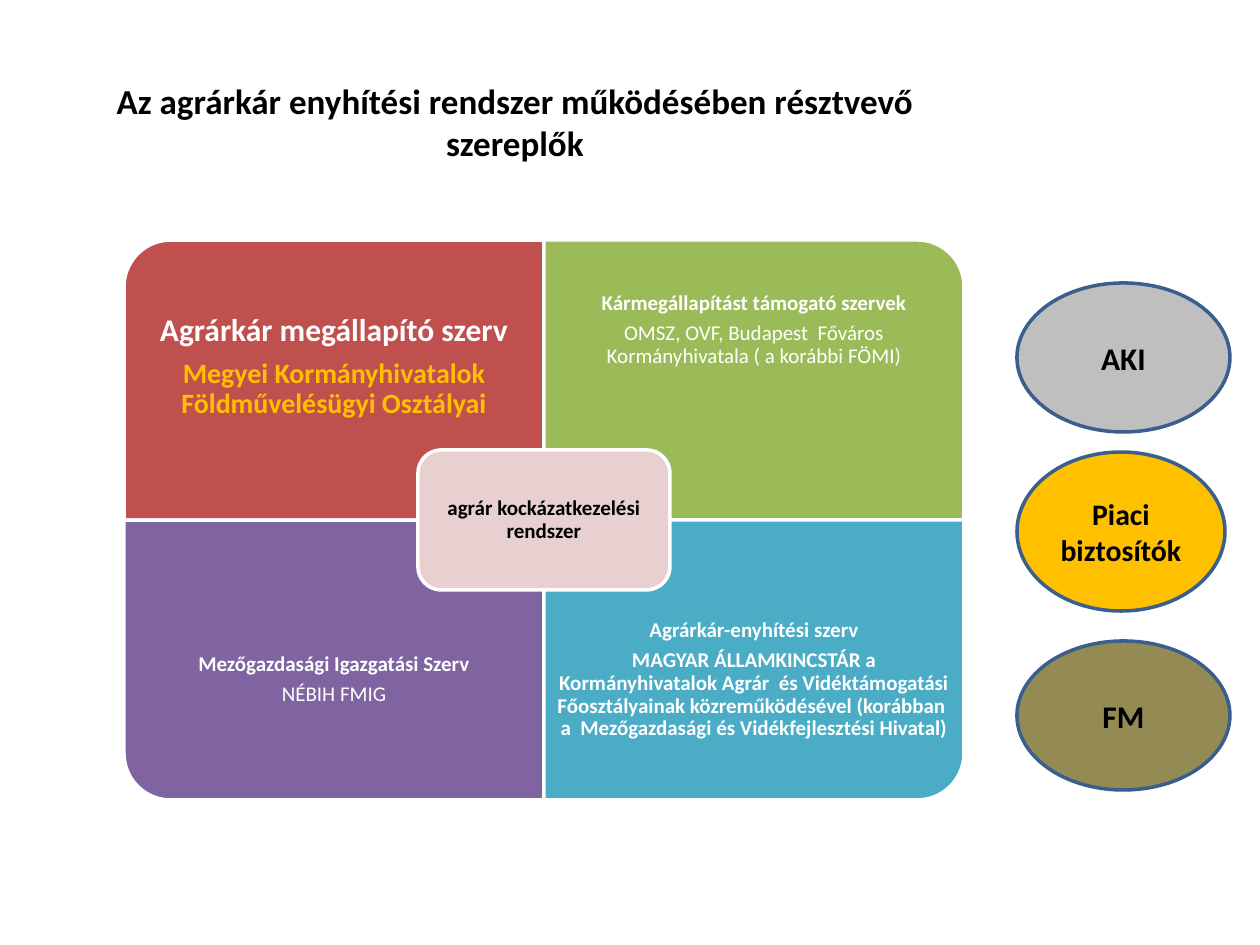
"""Build the slide on the actors of the farm damage relief system."""
from pptx import Presentation
from pptx.dml.color import RGBColor
from pptx.enum.shapes import MSO_SHAPE
from pptx.enum.text import MSO_ANCHOR, PP_ALIGN
from pptx.util import Emu, Pt

PX = 914400 / 126


def write(shape, paras, inset=None, tight=False):
    frame = shape.text_frame
    frame.word_wrap = True
    frame.vertical_anchor = MSO_ANCHOR.MIDDLE
    if inset is not None:
        gap = Emu(int(inset * PX))
        frame.margin_left = frame.margin_right = gap
        frame.margin_top = frame.margin_bottom = gap
    for i, (text, size, color, bold) in enumerate(paras):
        para = frame.add_paragraph() if i else frame.paragraphs[0]
        para.alignment = PP_ALIGN.CENTER
        if tight:
            para.line_spacing = 0.9
            if i < len(paras) - 1:
                para.space_after = Pt(round(size * 0.35, 1))
        for j, line in enumerate(text.split("\n")):
            if j:
                para.add_line_break()
            run = para.add_run()
            run.text = line
            run.font.name = "Calibri"
            run.font.size = Pt(size)
            run.font.bold = bold
            run.font.color.rgb = RGBColor.from_string(color)


def draw(kind, box, fill, edge):
    shape = slide.shapes.add_shape(kind, *[Emu(int(n * PX)) for n in box])
    shape.shadow.inherit = False
    shape.fill.solid()
    shape.fill.fore_color.rgb = RGBColor.from_string(fill)
    shape.line.color.rgb = RGBColor.from_string(edge)
    shape.line.width = Pt(2)
    return shape


deck = Presentation()
deck.slide_width = Emu(int(1260 * PX))
deck.slide_height = Emu(int(945 * PX))
slide = deck.slides.add_slide(deck.slide_layouts[6])

title = slide.shapes.add_textbox(*[Emu(int(n * PX)) for n in (93, 68, 844, 107)])
write(title, [("Az agrárkár enyhítési rendszer működésében résztvevő\nszereplők", 20, "000000", True)])

LEFT, TOP, WIDE, HIGH = 124, 240, 420, 280
WHITE = "FFFFFF"
cells = [
    (0, 0, 270, "C0504D", 15, 22, [
        ("Agrárkár megállapító szerv", 18, WHITE, True),
        ("Megyei Kormányhivatalok Földművelésügyi Osztályai", 16, "FFC000", True)]),
    (1, 0, 0, "9BBB59", 11, -15, [
        ("Kármegállapítást támogató szervek", 12, WHITE, True),
        ("OMSZ, OVF, Budapest  Főváros Kormányhivatala ( a korábbi FÖMI)", 12, WHITE, False)]),
    (0, 1, 180, "8064A2", 11, -15, [
        ("Mezőgazdasági Igazgatási Szerv", 12, WHITE, True),
        ("NÉBIH FMIG", 12, WHITE, False)]),
    (1, 1, 90, "4BACC6", 11, -15, [
        ("Agrárkár-enyhítési szerv", 12, WHITE, True),
        ("MAGYAR ÁLLAMKINCSTÁR a Kormányhivatalok Agrár  és Vidéktámogatási "
         "Főosztályainak közreműködésével (korábban  a  Mezőgazdasági és "
         "Vidékfejlesztési Hivatal)", 12, WHITE, True)]),
]
for col, row, turn, fill, inset, shift, paras in cells:
    x, y = LEFT + col * WIDE, TOP + row * HIGH
    w, h = (HIGH, WIDE) if turn % 180 else (WIDE, HIGH)
    box = (x + (WIDE - w) / 2, y + (HIGH - h) / 2, w, h)
    tile = draw(MSO_SHAPE.ROUND_1_RECTANGLE, box, fill, WHITE)
    tile.rotation = turn
    spot = (x, y + row * HIGH / 4 + shift, WIDE, HIGH * 3 / 4)
    label = slide.shapes.add_textbox(*[Emu(int(n * PX)) for n in spot])
    write(label, paras, inset, True)

hub = draw(MSO_SHAPE.ROUNDED_RECTANGLE, (418, 450, 252, 140), "E8D0D0", WHITE)
write(hub, [("agrár kockázatkezelési rendszer", 12, "000000", True)], 6, True)

ovals = [
    ("AKI", 283, 213, 149, "BFBFBF", 18),
    ("Piaci biztosítók", 452, 208, 159, "FFC000", 17),
    ("FM", 641, 213, 149, "948A54", 18),
]
for name, y, w, h, fill, size in ovals:
    oval = draw(MSO_SHAPE.OVAL, (1017, y, w, h), fill, "3A5F8C")
    write(oval, [(name, size, "000000", True)])

deck.save("out.pptx")
